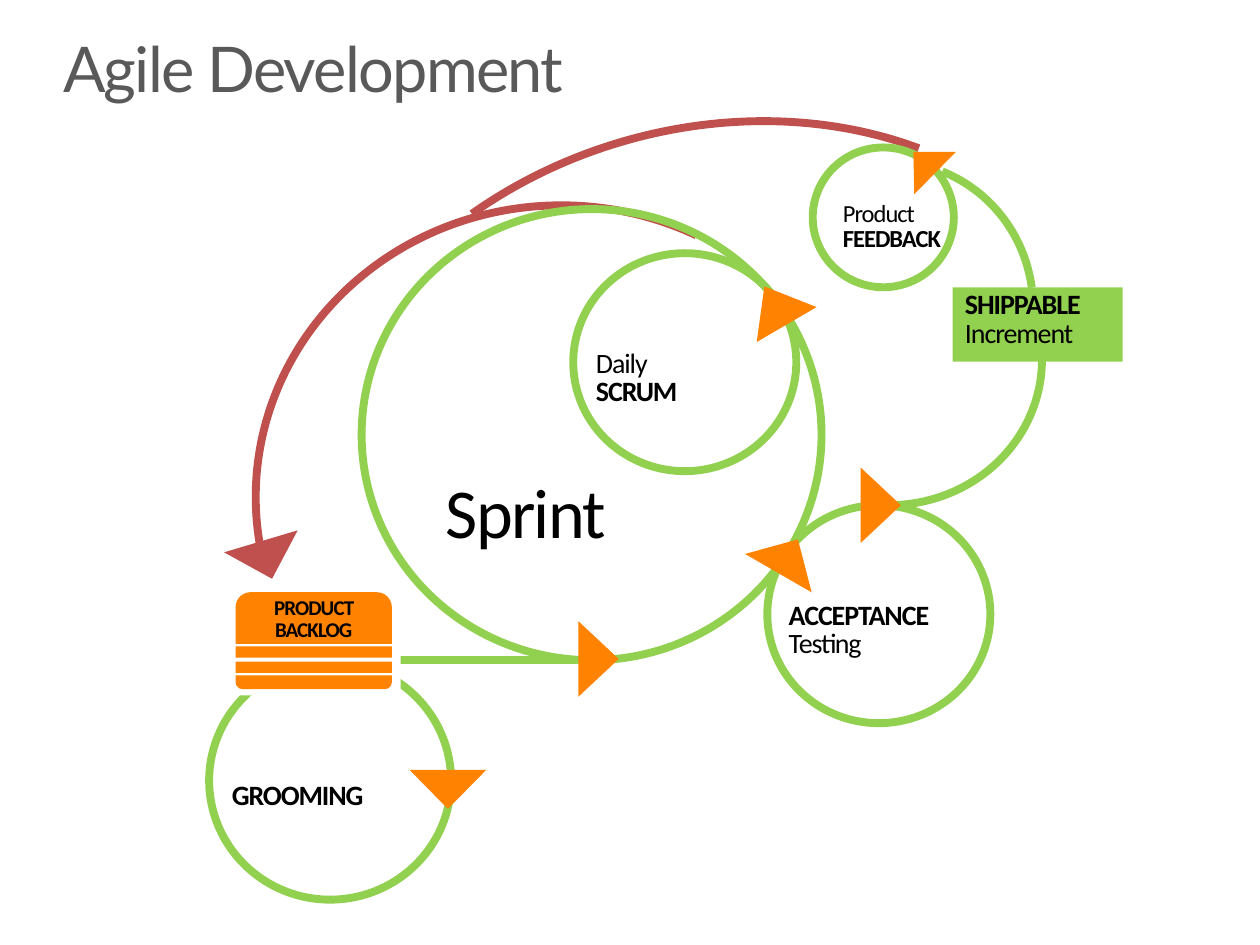
from lxml.etree import SubElement
from pptx import Presentation
from pptx.dml.color import RGBColor
from pptx.enum.shapes import MSO_CONNECTOR, MSO_SHAPE as SHAPE
from pptx.enum.text import MSO_ANCHOR as ANCHOR, MSO_AUTO_SIZE as FIT, PP_ALIGN as ALIGN
from pptx.oxml.ns import qn
from pptx.util import Inches, Pt

COLS, ROWS = 1000, 750
UNIT = Inches(10) // COLS
GREEN = RGBColor(0x92, 0xD0, 0x50)
ORANGE = RGBColor(0xFF, 0x82, 0x00)
RED = RGBColor(0xC0, 0x50, 0x4D)
WHITE = RGBColor(0xFF, 0xFF, 0xFF)
BLACK = RGBColor(0x00, 0x00, 0x00)
GREY = RGBColor(0x59, 0x59, 0x59)
STROKE = Pt(4.5)
MARGINS = ("margin_left", "margin_top", "margin_right", "margin_bottom")


def place(box, x, y, w, h):
    """Turn grid cells relative to a box into slide lengths."""
    return [int(n * UNIT) for n in (box[0] + x, box[1] + y, w, h)]


def set_all(obj, values):
    """Set each attribute named in a dict."""
    for name, value in values.items():
        setattr(obj, name, value)


def fill_shape(sp, color):
    """Give a shape a flat fill without line or shadow."""
    sp.shadow.inherit = False
    sp.fill.solid()
    sp.fill.fore_color.rgb = color
    sp.line.fill.background()
    return sp


def add_block(slide, frame, color, kind=SHAPE.RECTANGLE):
    """Add a filled preset shape."""
    return fill_shape(slide.shapes.add_shape(kind, *frame), color)


def add_outline(slide, kind, frame, color=GREEN):
    """Add an unfilled shape with a thick line."""
    sp = slide.shapes.add_shape(kind, *frame)
    sp.shadow.inherit = False
    sp.fill.background()
    sp.line.color.rgb = color
    sp.line.width = STROKE
    return sp


def add_arc(slide, frame, ends, flip, rotation=0, color=GREEN):
    """Add an arc between two adjustment values."""
    sp = add_outline(slide, SHAPE.ARC, frame, color)
    sp.adjustments[0], sp.adjustments[1] = ends
    sp.rotation = rotation
    sp.element.spPr.xfrm.set(flip, "1")


def add_arrow(slide, frame, rotation=0, color=ORANGE):
    """Add a triangle that points down before it is rotated."""
    x, y, w, h = frame
    builder = slide.shapes.build_freeform(x, y)
    builder.add_line_segments([(x + w, y), (x + w // 2, y + h)])
    fill_shape(builder.convert_to_shape(), color).rotation = rotation


def write(sp, lines, size, margins, frame=None, align=ALIGN.LEFT, color=BLACK,
          name="Calibri", spacing=0.85, tracking=-60):
    """Write (text, bold) lines as paragraphs."""
    tf = sp.text_frame
    set_all(tf, {m: int(n * UNIT) for m, n in zip(MARGINS, margins)})
    set_all(tf, frame or {})
    for i, (text, bold) in enumerate(lines):
        p = tf.add_paragraph() if i else tf.paragraphs[0]
        set_all(p, {"alignment": align, "line_spacing": spacing})
        r = p.add_run()
        r.text = text
        set_all(r.font, {"name": name, "size": Pt(size), "bold": bold})
        r.font.color.rgb = color
        r.font._element.set("spc", str(tracking))


def add_label(slide, frame, lines, size=16, margins=(18, 20, 0, 0), **style):
    """Add an unwrapped text box."""
    fit = {"word_wrap": False, "auto_size": FIT.SHAPE_TO_FIT_TEXT,
           "vertical_anchor": ANCHOR.TOP}
    write(slide.shapes.add_textbox(*frame), lines, size, margins, fit, **style)


def title(slide, box):
    """Format the title placeholder."""
    sp = slide.shapes.title
    set_all(sp, dict(zip(("left", "top", "width", "height"), place(box, 0, 0, 900, 55))))
    fit = {"word_wrap": True, "auto_size": FIT.SHAPE_TO_FIT_TEXT,
           "vertical_anchor": ANCHOR.TOP}
    write(sp, [("Agile Development", False)], 36, (0, 0, 0, 0), fit,
          color=GREY, name="Lato", spacing=0.9, tracking=-100)


def return_path(slide, box):
    """Draw the red arcs that lead back to the backlog."""
    add_arc(slide, place(box, 110, 0, 553, 674), (186.15, 14.81), "flipV", 252, RED)
    add_arc(slide, place(box, 22, 121, 485, 463), (145.62, 6.04), "flipH", color=RED)
    add_arrow(slide, place(box, 0, 387, 61, 31), 343.4, RED)


def sprint(slide, box):
    """Draw the sprint circle and the line that enters it."""
    add_outline(slide, SHAPE.OVAL, place(box, 24, 0, 365, 358))
    add_label(slide, place(box, 61, 216, 187, 62), [("Sprint", False)], 40,
              (0, 0, 0, 0), align=ALIGN.CENTER, tracking=-100)
    x, y, w, h = place(box, 0, 358, 195, 0)
    line = slide.shapes.add_connector(MSO_CONNECTOR.STRAIGHT, x, y, x + w, y + h)
    line.line.color.rgb = GREEN
    line.line.width = STROKE
    SubElement(line.element.spPr, qn("a:effectLst"))
    add_arrow(slide, place(box, 182, 341, 60, 32), 270)


def daily_scrum(slide, box):
    """Draw the daily scrum circle."""
    add_outline(slide, SHAPE.OVAL, place(box, 0, 0, 177, 173))
    add_label(slide, place(box, 0, 57, 84, 66), [("Daily", False), ("SCRUM", True)])
    add_arrow(slide, place(box, 133, 24, 55, 35), 149.7)


def increment(slide, box):
    """Draw the path through the shippable increment."""
    add_arc(slide, place(box, 0, 40, 243, 231), (160.09, 0.98), "flipV")
    add_arc(slide, place(box, 1, 0, 237, 232), (181.4, 0.98), "flipV", 293.6)
    sp = add_block(slide, place(box, 172, 98, 135, 59), GREEN)
    write(sp, [("SHIPPABLE", True), ("Increment", False)], 16, (10, 13, 10, 10),
          {"word_wrap": True, "vertical_anchor": ANCHOR.BOTTOM})


def acceptance(slide, box):
    """Draw the acceptance testing circle."""
    add_outline(slide, SHAPE.OVAL, place(box, 14, 16, 177, 173))
    add_label(slide, place(box, 13, 73, 192, 72),
              [("ACCEPTANCE", True), ("Testing", False)])
    add_arrow(slide, place(box, 0, 41, 61, 31), 210)
    add_arrow(slide, place(box, 74, 0, 60, 32), 270)


def grooming(slide, box):
    """Draw the grooming circle."""
    add_outline(slide, SHAPE.OVAL, place(box, 0, 0, 192, 189))
    add_label(slide, place(box, 0, 76, 182, 47), [("GROOMING", True)])
    add_arrow(slide, place(box, 159, 86, 61, 31))


def backlog(slide, box):
    """Draw the product backlog stack."""
    add_block(slide, place(box, 0, 0, 138, 87), WHITE)
    head = add_block(slide, place(box, 7, 5, 124, 41), ORANGE,
                     SHAPE.ROUND_2_SAME_RECTANGLE)
    head.adjustments[0] = 0.29
    write(head, [("PRODUCT BACKLOG", True)], 12, (10, 0, 10, 0),
          {"word_wrap": True, "vertical_anchor": ANCHOR.MIDDLE},
          align=ALIGN.CENTER, tracking=-50)
    for row in range(2):
        add_block(slide, place(box, 7, 48 + 12 * row, 124, 9), ORANGE)
    foot = add_block(slide, place(box, 7, 71, 124, 11), ORANGE,
                     SHAPE.ROUND_2_SAME_RECTANGLE)
    foot.adjustments[0], foot.adjustments[1] = 0, 0.5


def feedback(slide, box):
    """Draw the product feedback circle."""
    add_outline(slide, SHAPE.OVAL, place(box, 0, 0, 112, 111))
    add_label(slide, place(box, 4, 29, 112, 47),
              [("Product", False), ("FEEDBACK", True)], 14, (20, 15, 0, 0))
    add_arrow(slide, place(box, 65, 0, 47, 24), 134.5)


def main():
    """Build the slide."""
    prs = Presentation()
    set_all(prs, {"slide_width": COLS * UNIT, "slide_height": ROWS * UNIT})
    slide = prs.slides.add_slide(prs.slide_layouts[5])
    regions = [(return_path, (181, 42)), (sprint, (263, 166)), (increment, (584, 130)),
               (acceptance, (595, 385)), (grooming, (166, 525)),
               (daily_scrum, (455, 201)), (backlog, (180, 465)),
               (feedback, (645, 117)), (title, (50, 30))]
    for draw, corner in regions:
        draw(slide, corner)
    prs.save("out.pptx")


if __name__ == "__main__":
    main()
